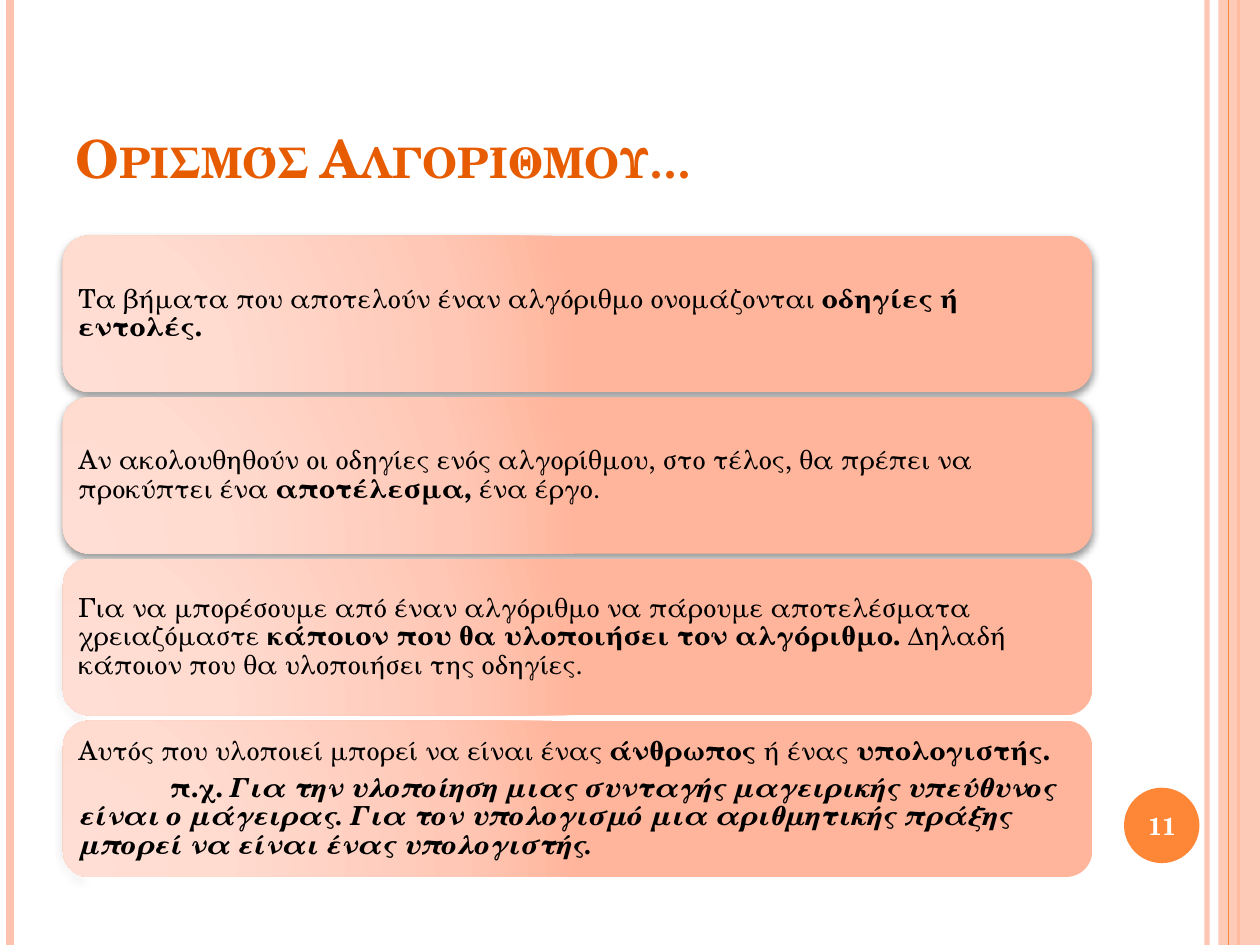
"""Build the slide that defines the instructions of an algorithm."""
from dataclasses import dataclass

from lxml import etree
from pptx import Presentation
from pptx.dml.color import RGBColor
from pptx.enum.shapes import MSO_CONNECTOR, MSO_SHAPE
from pptx.enum.text import MSO_ANCHOR, PP_ALIGN
from pptx.oxml import parse_xml
from pptx.oxml.ns import nsdecls, qn
from pptx.util import Cm, Pt

STRAIGHT = MSO_CONNECTOR.STRAIGHT
RECTANGLE, ELLIPSE, ROUNDED = MSO_SHAPE.RECTANGLE, MSO_SHAPE.OVAL, MSO_SHAPE.ROUNDED_RECTANGLE
MIDDLE, BOTTOM = MSO_ANCHOR.MIDDLE, MSO_ANCHOR.BOTTOM
LEFT, CENTER = PP_ALIGN.LEFT, PP_ALIGN.CENTER

SLIDE_WIDTH, SLIDE_HEIGHT = 25.4, 19.05
CARD_LEFT, CARD_TOP, CARD_WIDTH, CARD_HEIGHT, CARD_PITCH = 1.27, 4.75, 20.75, 3.15, 3.26
CARD_INSET, TAB_STOP = 0.16, 1.85

BOLD = {"bold": True}
BOLD_ITALIC = {"bold": True, "italic": True}

CARDS = [
    [[("Τα βήματα που αποτελούν έναν αλγόριθμο ονομάζονται ", {}),
      ("οδηγίες ή εντολές.", BOLD)]],
    [[("Αν ακολουθηθούν οι οδηγίες ενός αλγορίθμου, στο τέλος, θα πρέπει να προκύπτει ένα ", {}),
      ("αποτέλεσμα,", BOLD),
      (" ένα έργο.", {})]],
    [[("Για να μπορέσουμε από έναν αλγόριθμο να πάρουμε αποτελέσματα χρειαζόμαστε ", {}),
      ("κάποιον που θα υλοποιήσει τον αλγόριθμο. ", BOLD),
      ("Δηλαδή κάποιον που θα υλοποιήσει της οδηγίες.", {})]],
    [[("Αυτός που υλοποιεί μπορεί να είναι ένας ", {}),
      ("άνθρωπος ", BOLD),
      ("ή ένας ", {}),
      ("υπολογιστής.", BOLD)],
     [("\tπ.χ. ", BOLD),
      ("Για την υλοποίηση μιας συνταγής μαγειρικής υπεύθυνος είναι ο μάγειρας. "
       "Για τον υπολογισμό μια αριθμητικής πράξης μπορεί να είναι ένας υπολογιστής.",
       BOLD_ITALIC)]],
]


@dataclass(frozen=True)
class Theme:
    font: str = "TeX Gyre Schola"
    accent: str = "FE8637"
    pale: str = "FEC3AE"
    title: str = "E75C01"
    text: str = "000000"
    inverse: str = "FFFFFF"
    card_stops: tuple = ((0, "FFDED5"), (30, "FFDBD0"), (75, "FFC8B6"), (100, "FFB59B"))
    title_size: float = 30
    body_size: float = 15
    number_size: float = 14


def add_text(paragraph, text, *, font, size, color, bold=False, italic=False, small_caps=False):
    run = paragraph.add_run()
    run.text = text
    run.font.name = font
    run.font.size = Pt(size)
    run.font.bold = bold
    run.font.italic = italic
    run.font.color.rgb = RGBColor.from_string(color)
    if small_caps:
        run.font._element.set("cap", "small")


def set_opacity(element, percent):
    color = next(element.iter(qn("a:srgbClr")))
    etree.SubElement(color, qn("a:alpha"), val=str(percent * 1000))


class SlideBuilder:
    def __init__(self, slide, theme):
        self.slide = slide
        self.theme = theme

    def vertical_line(self, x, color, width, opacity=100):
        line = self.slide.shapes.add_connector(STRAIGHT, Cm(x), 0, Cm(x), Cm(SLIDE_HEIGHT))
        line.line.color.rgb = RGBColor.from_string(color)
        line.line.width = Pt(width)
        properties = line._element.spPr
        if opacity < 100:
            set_opacity(properties, opacity)
        etree.SubElement(properties, qn("a:effectLst"))

    def shape(self, kind, left, top, width, height, color, opacity=100):
        shape = self.slide.shapes.add_shape(kind, Cm(left), Cm(top), Cm(width), Cm(height))
        shape.shadow.inherit = False
        shape.line.fill.background()
        shape.fill.solid()
        shape.fill.fore_color.rgb = RGBColor.from_string(color)
        if opacity < 100:
            set_opacity(shape._element.spPr, opacity)
        return shape

    def label(self, text, left, top, width, height, anchor, alignment, **text_format):
        box = self.slide.shapes.add_textbox(Cm(left), Cm(top), Cm(width), Cm(height))
        frame = box.text_frame
        frame.word_wrap = True
        frame.vertical_anchor = anchor
        paragraph = frame.paragraphs[0]
        paragraph.alignment = alignment
        add_text(paragraph, text, font=self.theme.font, bold=True, **text_format)

    def card(self, top, paragraphs):
        shape = self.shape(ROUNDED, CARD_LEFT, top, CARD_WIDTH, CARD_HEIGHT, self.theme.pale)
        self.card_gradient(shape)
        self.card_shadow(shape)
        frame = shape.text_frame
        frame.word_wrap = True
        frame.vertical_anchor = MIDDLE
        frame.margin_left = frame.margin_right = Cm(CARD_INSET)
        frame.margin_top = frame.margin_bottom = Cm(CARD_INSET)
        for index, runs in enumerate(paragraphs):
            paragraph = frame.add_paragraph() if index else frame.paragraphs[0]
            if runs[0][0].startswith("\t"):
                tabs = etree.SubElement(paragraph._p.get_or_add_pPr(), qn("a:tabLst"))
                etree.SubElement(tabs, qn("a:tab"), pos=str(Cm(TAB_STOP)), algn="l")
            paragraph.alignment = LEFT
            paragraph.line_spacing = 0.9
            paragraph.space_after = Pt(5)
            for text, emphasis in runs:
                add_text(paragraph, text, font=self.theme.font, size=self.theme.body_size,
                         color=self.theme.text, **emphasis)

    def card_gradient(self, shape):
        stops = "".join(
            f'<a:gs pos="{position * 1000}"><a:srgbClr val="{color}"/></a:gs>'
            for position, color in self.theme.card_stops)
        gradient = parse_xml(
            f'<a:gradFill {nsdecls("a")} rotWithShape="1"><a:gsLst>{stops}</a:gsLst>'
            '<a:path path="circle"><a:fillToRect l="5000" t="100000" r="120000" b="10000"/>'
            '</a:path></a:gradFill>')
        properties = shape._element.spPr
        properties.replace(properties.find(qn("a:solidFill")), gradient)

    def card_shadow(self, shape):
        effects = shape._element.spPr.find(qn("a:effectLst"))
        effects.append(parse_xml(
            f'<a:outerShdw {nsdecls("a")} blurRad="{Pt(4)}" dist="{Pt(2)}" dir="5400000" '
            'rotWithShape="0"><a:srgbClr val="000000"><a:alpha val="40000"/></a:srgbClr>'
            '</a:outerShdw>'))


def main():
    presentation = Presentation()
    presentation.slide_width, presentation.slide_height = Cm(SLIDE_WIDTH), Cm(SLIDE_HEIGHT)
    theme = Theme()
    builder = SlideBuilder(presentation.slides.add_slide(presentation.slide_layouts[6]), theme)

    builder.vertical_line(24.33, theme.pale, 3, opacity=93)
    builder.vertical_line(0.21, theme.pale, 4.5)
    builder.vertical_line(24.97, theme.accent, 1.5)
    builder.shape(RECTANGLE, 24.56, 0, 0.84, SLIDE_HEIGHT, theme.pale, opacity=87)
    builder.vertical_line(24.77, theme.accent, 0.75)
    builder.shape(ELLIPSE, 22.66, 15.88, 1.52, 1.52, theme.accent)
    builder.label("11", 22.58, 15.93, 1.7, 1.45, MIDDLE, CENTER,
                  size=theme.number_size, color=theme.inverse)
    builder.label("Ορισμός Αλγορίθμου…", CARD_LEFT, 0.76, CARD_WIDTH, 3.18, BOTTOM, LEFT,
                  size=theme.title_size, color=theme.title, small_caps=True)
    for index, paragraphs in enumerate(CARDS):
        builder.card(CARD_TOP + index * CARD_PITCH, paragraphs)

    presentation.save("out.pptx")


if __name__ == "__main__":
    main()
